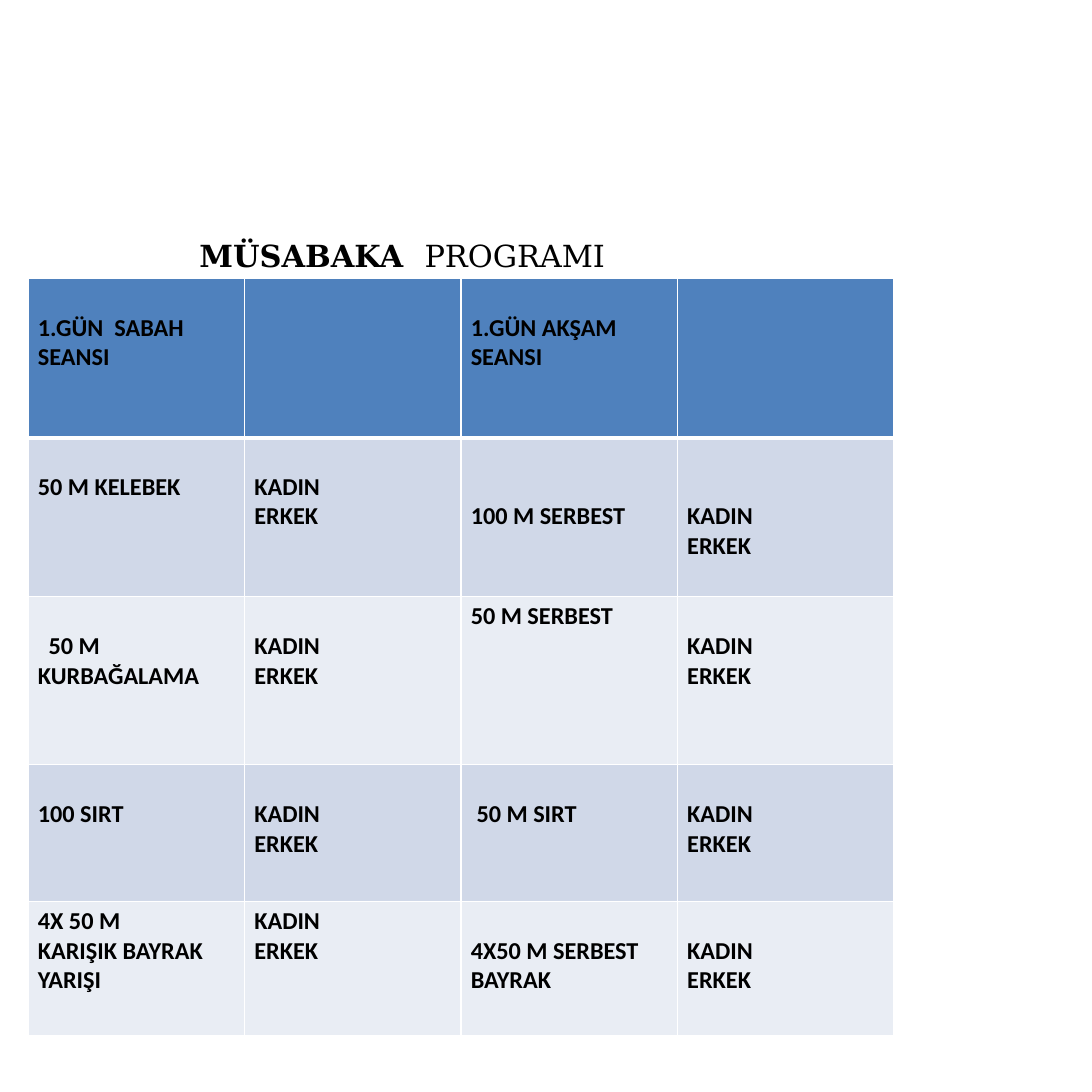
from lxml.etree import SubElement
from pptx import Presentation
from pptx.dml.color import RGBColor
from pptx.enum.text import MSO_ANCHOR, MSO_AUTO_SIZE, PP_ALIGN
from pptx.oxml.ns import qn
from pptx.util import Inches, Pt

# Content: each cell is (lines of text, blank lines above, first-line indent)
TITLE = [("MÜSABAKA  ", True), ("PROGRAMI", False)]
GENDERS = ["KADIN", "ERKEK"]
EMPTY = ([], 0, 0)
PROGRAM = [
    [(["1.GÜN  SABAH SEANSI"], 1, 0), EMPTY, (["1.GÜN AKŞAM SEANSI"], 1, 0), EMPTY],
    [(["50 M KELEBEK"], 1, 0), (GENDERS, 1, 0), (["100 M SERBEST"], 2, 0), (GENDERS, 2, 0)],
    [(["50 M KURBAĞALAMA"], 1, 0.11), (GENDERS, 1, 0), (["50 M SERBEST"], 0, 0), (GENDERS, 1, 0)],
    [(["100 SIRT"], 1, 0), (GENDERS, 1, 0), (["50 M SIRT"], 1, 0.06), (GENDERS, 1, 0)],
    [(["4X 50 M", "KARIŞIK BAYRAK YARIŞI"], 0, 0), (GENDERS, 0, 0),
     (["4X50 M SERBEST BAYRAK"], 1, 0), (GENDERS, 1, 0)],
]

# Layout and formats
SLIDE_SIZE = 11.25
TITLE_BOX = (1.21, 2.38, 5.87, 0.41)
TABLE_LEFT, TABLE_TOP = 0.29, 2.87
COLUMN_WIDTH = 2.23
ROW_HEIGHTS = [1.64, 1.64, 1.73, 1.41, 1.38]
CELL_MARGIN, LINE_HEIGHT = 0.05, 0.305
HEADER_FILL, BAND_FILLS = "4F81BD", ["E9EDF4", "D0D8E8"]
BLACK, WHITE = "000000", "FFFFFF"
TITLE_FONT = {"name": "DejaVu Serif", "size": Pt(22.6)}
CELL_FONT = {"name": "Calibri", "size": Pt(18), "bold": True}


def color(value):
    return RGBColor.from_string(value)


def add_run(paragraph, text, font_format):
    run = paragraph.add_run()
    run.text = text
    for name, value in font_format.items():
        setattr(run.font, name, value)
    run.font.color.rgb = color(BLACK)


def set_borders(cell, widths):
    properties = cell._tc.get_or_add_tcPr()
    for side, width in widths.items():
        line = SubElement(properties, qn(f"a:ln{side}"), w=str(Pt(width)))
        fill = SubElement(line, qn("a:solidFill"))
        SubElement(fill, qn("a:srgbClr"), val=WHITE)


def fill_title(shape):
    shape.left, shape.top, shape.width, shape.height = map(Inches, TITLE_BOX)
    frame = shape.text_frame
    frame_format = {"margin_left": 0, "margin_top": 0, "margin_right": 0, "margin_bottom": 0,
                    "vertical_anchor": MSO_ANCHOR.TOP, "word_wrap": True,
                    "auto_size": MSO_AUTO_SIZE.NONE}
    for name, value in frame_format.items():
        setattr(frame, name, value)
    paragraph = frame.paragraphs[0]
    paragraph.alignment = PP_ALIGN.CENTER
    paragraph.line_spacing = Pt(31.6)
    for text, bold in TITLE:
        add_run(paragraph, text, {**TITLE_FONT, "bold": bold})


def fill_cell(cell, row_index, lines, blank_lines, indent):
    # The header has a thick rule below it, which the next row shares
    widths = {"L": 1, "R": 1, "T": 3 if row_index == 1 else 1, "B": 3 if row_index == 0 else 1}
    set_borders(cell, widths)
    cell.fill.solid()
    cell.fill.fore_color.rgb = color(BAND_FILLS[row_index % 2] if row_index else HEADER_FILL)
    cell.margin_top = Inches(CELL_MARGIN + blank_lines * LINE_HEIGHT)
    frame = cell.text_frame
    for index, text in enumerate(lines):
        paragraph = frame.add_paragraph() if index else frame.paragraphs[0]
        paragraph.alignment = PP_ALIGN.LEFT
        if indent:
            paragraph._p.get_or_add_pPr().set("indent", str(Inches(indent)))
        add_run(paragraph, text, CELL_FONT)


def main():
    presentation = Presentation()
    presentation.slide_width = presentation.slide_height = Inches(SLIDE_SIZE)
    slide = presentation.slides.add_slide(presentation.slide_layouts.get_by_name("Title Only"))
    fill_title(slide.shapes.title)

    # Programme table
    columns = len(PROGRAM[0])
    table = slide.shapes.add_table(
        len(PROGRAM), columns, Inches(TABLE_LEFT), Inches(TABLE_TOP),
        Inches(columns * COLUMN_WIDTH), Inches(sum(ROW_HEIGHTS))).table
    for column in table.columns:
        column.width = Inches(COLUMN_WIDTH)
    for row_index, (height, row) in enumerate(zip(ROW_HEIGHTS, PROGRAM)):
        table.rows[row_index].height = Inches(height)
        for column_index, content in enumerate(row):
            fill_cell(table.cell(row_index, column_index), row_index, *content)

    presentation.save("out.pptx")


if __name__ == "__main__":
    main()
